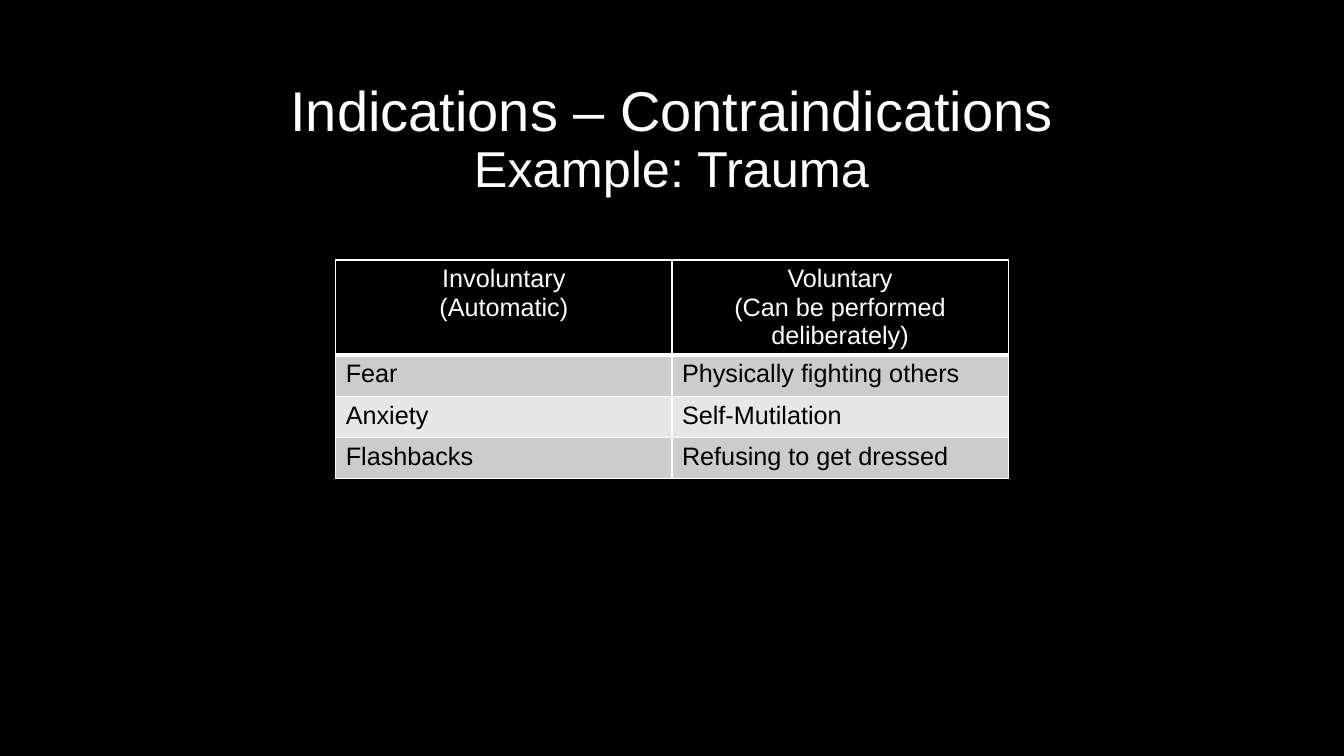
from lxml.etree import SubElement
from pptx import Presentation
from pptx.dml.color import RGBColor
from pptx.enum.text import MSO_ANCHOR, PP_ALIGN
from pptx.oxml.ns import qn
from pptx.util import Inches, Pt

COLORS = {"black": "000000", "white": "FFFFFF", "dark": "CCCCCC", "light": "E7E7E7"}
HEAD = [["Involuntary", "(Automatic)"],
        ["Voluntary", "(Can be performed deliberately)"]]
BODY = [["Fear", "Physically fighting others"],
        ["Anxiety", "Self-Mutilation"],
        ["Flashbacks", "Refusing to get dressed"]]


def paint(fill, color):
    """Give a fill one solid colour."""
    fill.solid()
    fill.fore_color.rgb = RGBColor.from_string(COLORS[color])


def write(para, text, size=18, color="white", align=PP_ALIGN.CENTER):
    """Add a formatted run to a paragraph."""
    para.alignment = align
    run = para.add_run()
    run.text = text
    run.font.name = "Arial"
    run.font.size = Pt(size)
    run.font.color.rgb = RGBColor.from_string(COLORS[color])


def edge(cell, base):
    """Draw white borders around a cell, with its own bottom width."""
    props = cell._tc.get_or_add_tcPr()
    for side, width in zip("LRTB", (1, 1, 1, base)):
        line = SubElement(props, qn(f"a:ln{side}"), w=str(Pt(width)))
        fill = SubElement(line, qn("a:solidFill"))
        SubElement(fill, qn("a:srgbClr"), val=COLORS["white"])


def fill_cell(cell, lines, shade, base=1, **style):
    """Set the borders, fill and lines of text of a cell."""
    edge(cell, base)
    paint(cell.fill, shade)
    frame = cell.text_frame
    for i, line in enumerate(lines):
        para = frame.add_paragraph() if i else frame.paragraphs[0]
        write(para, line, **style)


def add_title(slide):
    """Place the two-line title."""
    title = slide.shapes.title
    title.left, title.top = Inches(1), Inches(0.67)
    title.width, title.height = Inches(11.32), Inches(1.45)
    title.text_frame.vertical_anchor = MSO_ANCHOR.MIDDLE
    para = title.text_frame.paragraphs[0]
    para.line_spacing = 0.9
    write(para, "Indications – Contraindications", size=40)
    para.add_line_break()
    write(para, "Example: Trauma", size=36)


def add_grid(slide):
    """Add the table of involuntary and voluntary signs."""
    table = slide.shapes.add_table(
        len(BODY) + 1, len(HEAD), Inches(3.33), Inches(2.58),
        Inches(6.67), Inches(2.15)).table
    for i, row in enumerate(table.rows):
        row.height = Inches(0.41 if i else 0.92)
    for cell, lines in zip(table.rows[0].cells, HEAD):
        fill_cell(cell, lines, "black", base=3)
    for i, words in enumerate(BODY):
        shade = "light" if i % 2 else "dark"
        for cell, text in zip(table.rows[i + 1].cells, words):
            fill_cell(cell, [text], shade, color="black", align=PP_ALIGN.LEFT)


def main():
    """Build and save the slide."""
    deck = Presentation()
    deck.slide_width, deck.slide_height = Inches(13.33), Inches(7.5)
    slide = deck.slides.add_slide(deck.slide_layouts[5])
    paint(slide.background.fill, "black")
    add_title(slide)
    add_grid(slide)
    deck.save("out.pptx")


if __name__ == "__main__":
    main()
